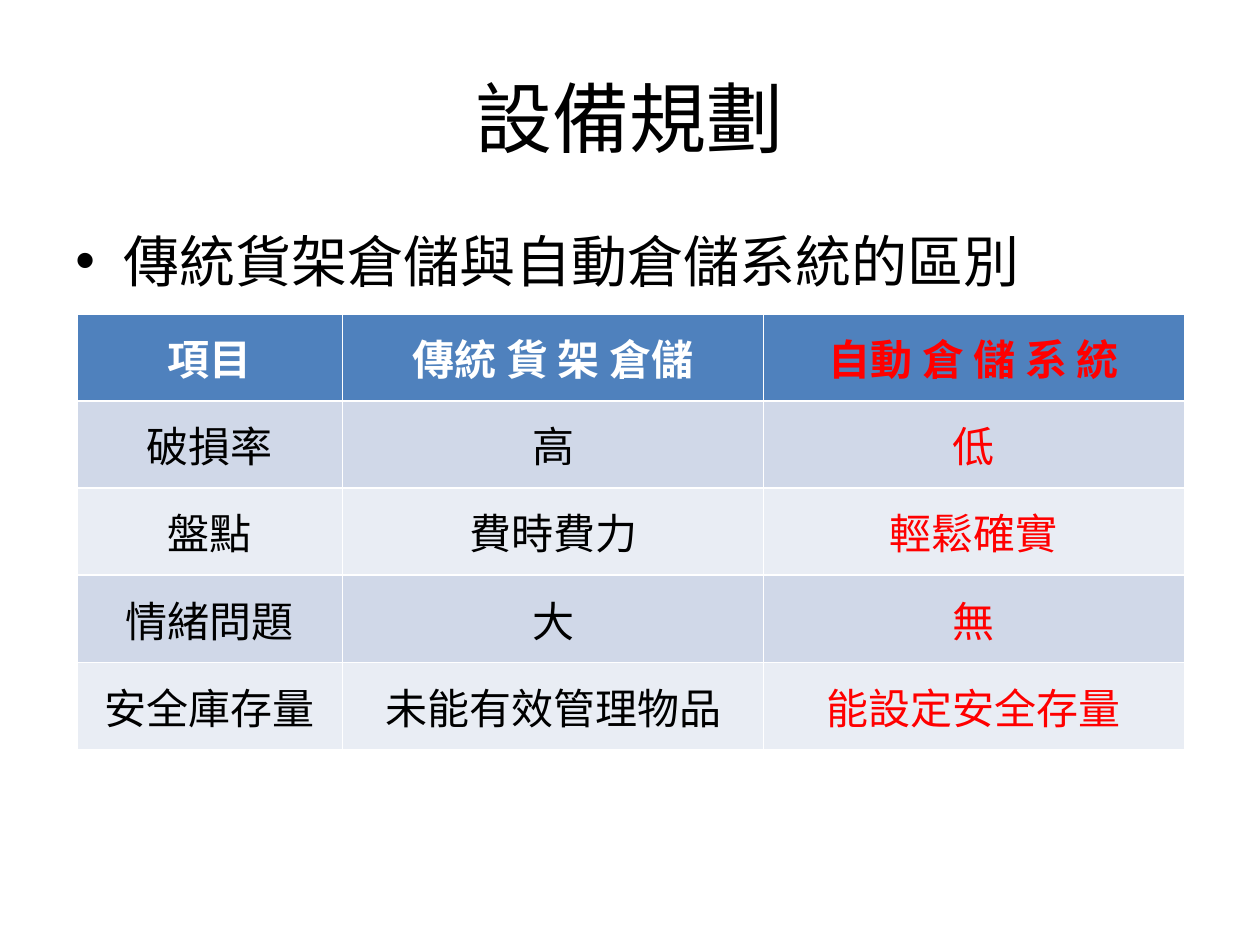
from pptx import Presentation
from pptx import util as u
from pptx.dml import color
from pptx.enum import text
from pptx.oxml import ns
from lxml import etree


def paint(code):
    return color.RGBColor.from_string(code)


class Deck:
    font = "Roboto Slab"
    black, white, red = "000000", "FFFFFF", "FF0000"
    head = "4F81BD"
    bands = ("D0D8E8", "E9EDF4")

    def __init__(self):
        self.prs = Presentation()
        self.prs.slide_width = u.Inches(10)
        self.prs.slide_height = u.Inches(7.5)
        self.slide = self.prs.slides.add_slide(self.prs.slide_layouts[5])

    def add_run(self, para, words, size, tint, bold=False):
        run = para.add_run()
        run.text = words
        font = run.font
        font.name, font.size, font.bold = self.font, u.Pt(size), bold
        font.color.rgb = paint(tint)

    def title(self, words, box):
        shape = self.slide.shapes.title
        shape.left, shape.top, shape.width, shape.height = map(u.Inches, box)
        frame = shape.text_frame
        frame.vertical_anchor = text.MSO_ANCHOR.MIDDLE
        para = frame.paragraphs[0]
        para.alignment = text.PP_ALIGN.CENTER
        self.add_run(para, words, 44, self.black)

    def bullet(self, words, box):
        frame = self.slide.shapes.add_textbox(*map(u.Inches, box)).text_frame
        frame.word_wrap = True
        para = frame.paragraphs[0]
        props = para._p.get_or_add_pPr()
        props.set("marL", str(u.Inches(0.38)))
        props.set("indent", str(u.Inches(-0.38)))
        face = etree.SubElement(props, ns.qn("a:buFont"))
        face.set("typeface", "Arial")
        mark = etree.SubElement(props, ns.qn("a:buChar"))
        mark.set("char", "•")
        self.add_run(para, words, 32, self.black)

    def table(self, rows, box, widths):
        frame = self.slide.shapes.add_table(
            len(rows), len(widths), *map(u.Inches, box))
        grid = frame.table
        for col, width in zip(grid.columns, widths):
            col.width = u.Inches(width)
        for r, row in enumerate(rows):
            fill = self.bands[(r - 1) % 2] if r else self.head
            for c, words in enumerate(row):
                plain = self.black if r else self.white
                tint = self.red if c == len(row) - 1 else plain
                self.cell(grid.cell(r, c), words, fill, tint, r == 0)

    def cell(self, cell, words, fill, tint, bold):
        cell.fill.solid()
        cell.fill.fore_color.rgb = paint(fill)
        cell.vertical_anchor = text.MSO_ANCHOR.MIDDLE
        para = cell.text_frame.paragraphs[0]
        para.alignment = text.PP_ALIGN.CENTER
        self.add_run(para, words, 24, tint, bold)


def main():
    deck = Deck()
    deck.title("設備規劃", (0.5, 0.3, 9, 1.25))
    deck.bullet("傳統貨架倉儲與自動倉儲系統的區別", (0.5, 1.75, 9, 4.95))
    rows = [
        ("項目", "傳統 貨 架 倉儲", "自動 倉 儲 系 統"),
        ("破損率", "高", "低"),
        ("盤點", "費時費力", "輕鬆確實"),
        ("情緒問題", "大", "無"),
        ("安全庫存量", "未能有效管理物品", "能設定安全存量"),
    ]
    deck.table(rows, (0.61, 2.49, 8.78, 3.46), (2.11, 3.34, 3.34))
    deck.prs.save("out.pptx")


if __name__ == "__main__":
    main()
